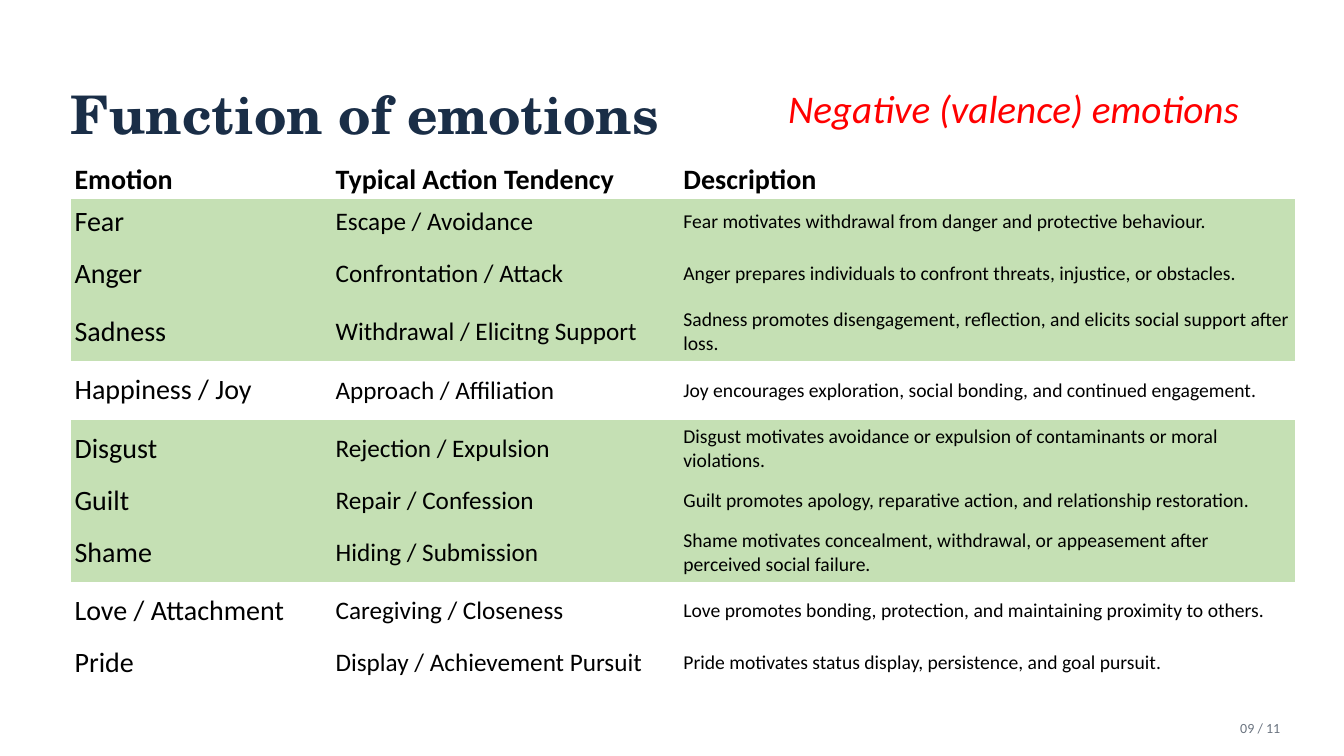
from pptx import Presentation
from pptx import util as u
from pptx.dml import color
from pptx.enum import text
from pptx.oxml import ns

UNIT = 0.1  # inches per grid column and row
SLIDE_COLUMNS, SLIDE_ROWS = 133.33, 75
NO_STYLE_NO_GRID = "{2D5ABB26-0587-4C30-8999-92F81FD0307C}"

# Table content: emotion, action tendency, description, is negative
EMOTIONS = [
    ("Fear", "Escape / Avoidance",
     "Fear motivates withdrawal from danger and protective behaviour.", True),
    ("Anger", "Confrontation / Attack",
     "Anger prepares individuals to confront threats, injustice, or obstacles.", True),
    ("Sadness", "Withdrawal / Elicitng Support",
     "Sadness promotes disengagement, reflection, and elicits social support after loss.", True),
    ("Happiness / Joy", "Approach / Affiliation",
     "Joy encourages exploration, social bonding, and continued engagement.", False),
    ("Disgust", "Rejection / Expulsion",
     "Disgust motivates avoidance or expulsion of contaminants or moral violations.", True),
    ("Guilt", "Repair / Confession",
     "Guilt promotes apology, reparative action, and relationship restoration.", True),
    ("Shame", "Hiding / Submission",
     "Shame motivates concealment, withdrawal, or appeasement after perceived social failure.", True),
    ("Love / Attachment", "Caregiving / Closeness",
     "Love promotes bonding, protection, and maintaining proximity to others.", False),
    ("Pride", "Display / Achievement Pursuit",
     "Pride motivates status display, persistence, and goal pursuit.", False),
]
HEADINGS = ("Emotion", "Typical Action Tendency", "Description")
COLUMN_WIDTHS = (25.9, 34.5, 61.1)
COLUMN_SIZES = (20, 18, 14)
HEADER_HEIGHT, SHORT_ROW, TALL_ROW = 2, 4.5, 5.8
SHORT_EMOTIONS = {"Fear", "Guilt", "Pride"}


def grid(units):
    return u.Inches(units * UNIT)


def rgb(value):
    return color.RGBColor.from_string(value)


def write(frame, content, *, size, ink, font="Calibri", bold=False, italic=False,
          align=text.PP_ALIGN.LEFT):
    paragraph = frame.paragraphs[0]
    paragraph.alignment = align
    run = paragraph.add_run()
    run.text = content
    run.font.name, run.font.size = font, u.Pt(size)
    run.font.bold, run.font.italic = bold, italic
    run.font.color.rgb = rgb(ink)


class SlideBuilder:
    ink, navy, grey, red, green = "000000", "1A2E47", "6B7480", "FF0000", "C5E0B4"
    title_font = "TeX Gyre Schola"

    def __init__(self, presentation):
        self.slide = presentation.slides.add_slide(presentation.slide_layouts[6])

    def label(self, content, left, top, width, height, **style):
        """Wrapped text without margins, centred vertically."""
        box = self.slide.shapes.add_textbox(*map(grid, (left, top, width, height)))
        frame = box.text_frame
        frame.word_wrap = True
        frame.vertical_anchor = text.MSO_ANCHOR.MIDDLE
        frame.margin_left = frame.margin_right = frame.margin_top = frame.margin_bottom = 0
        write(frame, content, **style)

    def caption(self, content, left, top, width, height, **style):
        """One line of text in a box that grows with it."""
        box = self.slide.shapes.add_textbox(*map(grid, (left, top, width, height)))
        box.text_frame.word_wrap = False
        box.text_frame.auto_size = text.MSO_AUTO_SIZE.SHAPE_TO_FIT_TEXT
        write(box.text_frame, content, **style)

    def cell(self, cell, content, fill=None, **style):
        cell.margin_left = cell.margin_right = u.Inches(0.04)
        cell.margin_top = cell.margin_bottom = u.Inches(0.02)
        cell.vertical_anchor = text.MSO_ANCHOR.MIDDLE
        if fill:
            cell.fill.solid()
            cell.fill.fore_color.rgb = rgb(fill)
        else:
            cell.fill.background()
        write(cell.text_frame, content, ink=self.ink, **style)

    def emotion_table(self, left, top):
        heights = [HEADER_HEIGHT] + [
            SHORT_ROW if emotion[0] in SHORT_EMOTIONS else TALL_ROW for emotion in EMOTIONS]
        shape = self.slide.shapes.add_table(
            len(heights), len(COLUMN_WIDTHS), grid(left), grid(top),
            grid(sum(COLUMN_WIDTHS)), grid(sum(heights)))
        table = shape.table
        table.first_row = table.horz_banding = False
        for style_id in shape.element.iter(ns.qn("a:tableStyleId")):
            style_id.text = NO_STYLE_NO_GRID
        for column, width in zip(table.columns, COLUMN_WIDTHS):
            column.width = grid(width)
        for row, height in zip(table.rows, heights):
            row.height = grid(height)

        for column, heading in enumerate(HEADINGS):
            self.cell(table.cell(0, column), heading, size=20, bold=True)
        for row, (*contents, negative) in enumerate(EMOTIONS, start=1):
            for column, (content, size) in enumerate(zip(contents, COLUMN_SIZES)):
                self.cell(table.cell(row, column), content, size=size,
                          fill=self.green if negative else None)


def main():
    presentation = Presentation()
    presentation.slide_width = grid(SLIDE_COLUMNS)
    presentation.slide_height = grid(SLIDE_ROWS)
    builder = SlideBuilder(presentation)

    # Title and page number
    builder.label("Function of emotions", 7, 6.5, 120, 9.5, size=38, bold=True,
                  ink=builder.navy, font=builder.title_font)
    builder.label("09 / 11", 119, 71, 8, 2.5, size=10, ink=builder.grey,
                  align=text.PP_ALIGN.RIGHT)

    # Emotions, with the negative ones shaded
    builder.emotion_table(7, 16)

    # Key to the shading
    builder.caption("Negative (valence) emotions", 77.2, 7.9, 47.3, 5.7, size=28,
                    italic=True, ink=builder.red)

    presentation.save("out.pptx")


if __name__ == "__main__":
    main()
